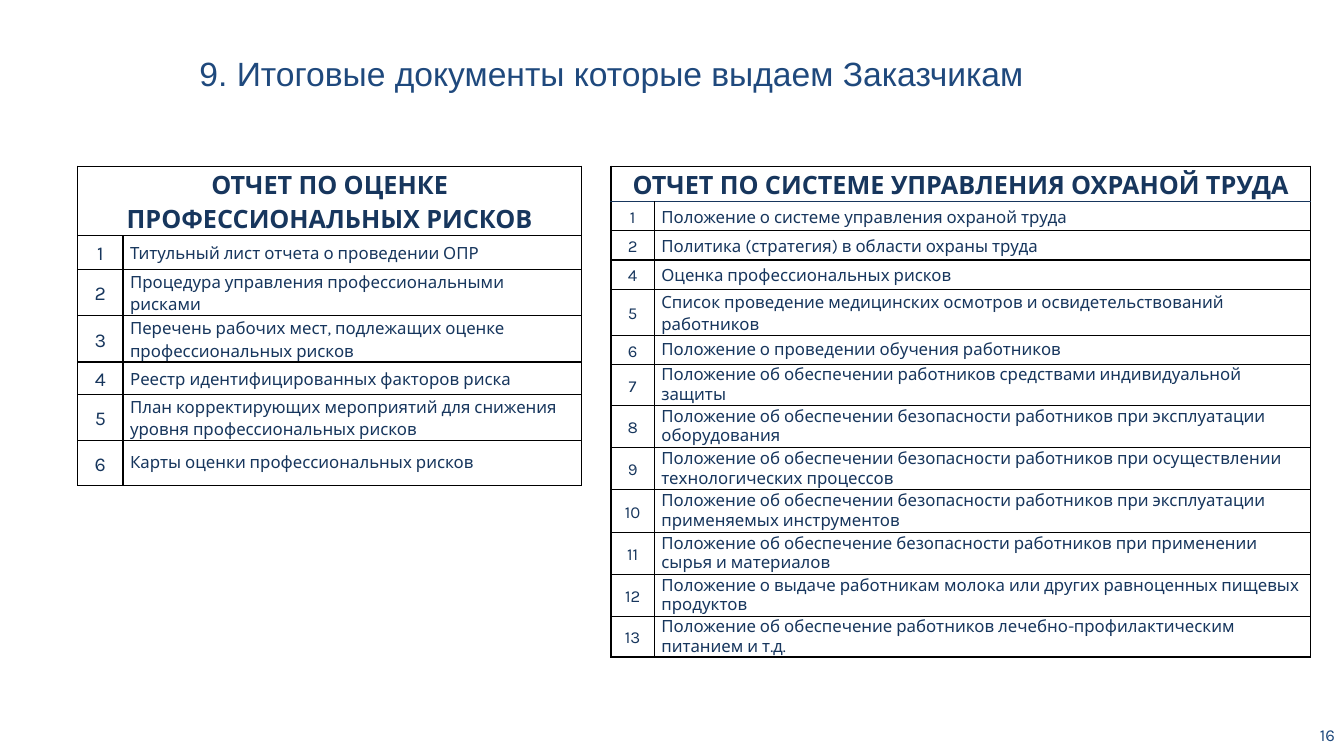
"""Builds the slide listing the final documents handed over to customers."""
from lxml import etree
from pptx import Presentation
from pptx.dml.color import RGBColor
from pptx.enum.text import MSO_ANCHOR, PP_ALIGN
from pptx.oxml.ns import qn
from pptx.util import Inches, Pt

LEFT, CENTER, RIGHT = PP_ALIGN.LEFT, PP_ALIGN.CENTER, PP_ALIGN.RIGHT
TOP, MIDDLE = MSO_ANCHOR.TOP, MSO_ANCHOR.MIDDLE
THEME = {
    "title_font": "Arial", "body_font": "Karla",
    "title_color": "1F497D", "table_color": "17365D", "border_color": "000000",
    "title_size": 24, "heading_size": 18, "body_size": 12,
    "border_width": 1, "loose": 1.15, "tight": 1.0, "title_spacing": 0.89,
}
TABLE_TOP = 1.65

TABLES = [
    {
        "heading": "ОТЧЕТ ПО ОЦЕНКЕ ПРОФЕССИОНАЛЬНЫХ РИСКОВ",
        "left": 0.77, "columns": [0.45, 4.55], "number_size": 14, "loose_rows": 5,
        "heights": [0.63, 0.33, 0.33, 0.42, 0.32, 0.43, 0.45],
        "heading_border": THEME["border_color"],
        "documents": [
            (1, "Титульный лист отчета о проведении ОПР"),
            (2, "Процедура управления профессиональными рисками"),
            (3, "Перечень рабочих мест, подлежащих оценке профессиональных рисков"),
            (4, "Реестр идентифицированных факторов риска"),
            (5, "План корректирующих мероприятий для снижения уровня профессиональных рисков"),
            (6, "Карты оценки профессиональных рисков"),
        ],
    },
    {
        "heading": "ОТЧЕТ ПО СИСТЕМЕ УПРАВЛЕНИЯ ОХРАНОЙ ТРУДА",
        "left": 6.06, "columns": [0.43, 6.51], "number_size": 12, "loose_rows": 4,
        "heights": [0.35] + [0.29] * 6 + [0.42] * 5 + [0.29],
        "heading_border": THEME["table_color"],
        "documents": [
            (1, "Положение о системе управления охраной труда"),
            (2, "Политика (стратегия) в области охраны труда"),
            (4, "Оценка профессиональных рисков"),
            (5, "Список проведение медицинских осмотров и освидетельствований работников"),
            (6, "Положение о проведении обучения работников"),
            (7, "Положение об обеспечении работников средствами индивидуальной защиты"),
            (8, "Положение об обеспечении безопасности работников при эксплуатации оборудования"),
            (9, "Положение об обеспечении безопасности работников при осуществлении технологических процессов"),
            (10, "Положение об обеспечении безопасности работников при эксплуатации применяемых инструментов"),
            (11, "Положение об обеспечение безопасности работников при применении сырья и материалов"),
            (12, "Положение о выдаче работникам молока или других равноценных пищевых продуктов"),
            (13, "Положение об обеспечение работников лечебно-профилактическим питанием и т.д."),
        ],
    },
]


def write(text_frame, text, font, size, color, alignment, spacing, bold=False):
    text_frame.word_wrap = True
    paragraph = text_frame.paragraphs[0]
    paragraph.text = text
    paragraph.alignment = alignment
    paragraph.line_spacing = spacing
    paragraph.font.name = font
    paragraph.font.size = Pt(size)
    paragraph.font.bold = bold
    paragraph.font.color.rgb = RGBColor.from_string(color)


def set_borders(cell, top, bottom):
    side = THEME["border_color"]
    properties = cell._tc.get_or_add_tcPr()
    edges = [("a:lnL", side), ("a:lnR", side), ("a:lnT", top), ("a:lnB", bottom)]
    for position, (tag, color) in enumerate(edges):
        line = etree.Element(qn(tag), w=str(Pt(THEME["border_width"])))
        fill = etree.SubElement(line, qn("a:solidFill"))
        etree.SubElement(fill, qn("a:srgbClr"), val=color)
        properties.insert(position, line)


presentation = Presentation()
presentation.slide_width = Inches(13.33)
presentation.slide_height = Inches(7.5)
slide = presentation.slides.add_slide(presentation.slide_layouts[6])

captions = [
    ("9. Итоговые документы которые выдаем Заказчикам", (1.88, 0.52, 11.45, 0.68), TOP,
     THEME["title_font"], THEME["title_size"], LEFT, THEME["title_spacing"]),
    ("16", (11.59, 7.07, 1.75, 0.44), MIDDLE,
     THEME["body_font"], THEME["body_size"], RIGHT, THEME["tight"]),
]
for text, box, anchor, font, size, alignment, spacing in captions:
    text_frame = slide.shapes.add_textbox(*map(Inches, box)).text_frame
    text_frame.vertical_anchor = anchor
    write(text_frame, text, font, size, THEME["title_color"], alignment, spacing)

for report in TABLES:
    widths, heights = report["columns"], report["heights"]
    table = slide.shapes.add_table(
        len(heights), len(widths), Inches(report["left"]), Inches(TABLE_TOP),
        Inches(sum(widths)), Inches(sum(heights))).table
    table.first_row = table.horz_banding = False
    for column, width in zip(table.columns, widths):
        column.width = Inches(width)
    for row, height in zip(table.rows, heights):
        row.height = Inches(height)
    table.cell(0, 0).merge(table.cell(0, 1))

    rows = [(report["heading"], None)] + report["documents"]
    for row_index, values in enumerate(rows):
        is_heading = row_index == 0
        for column_index, value in enumerate(values):
            cell = table.cell(row_index, column_index)
            cell.vertical_anchor = MIDDLE
            cell.margin_left = cell.margin_right = Inches(0.07)
            cell.margin_top = cell.margin_bottom = 0
            cell.fill.background()
            set_borders(
                cell,
                report["heading_border"] if row_index == 1 else THEME["border_color"],
                report["heading_border"] if is_heading else THEME["border_color"])
            if value is None:
                continue
            is_number = column_index == 0
            size = report["number_size"] if is_number else THEME["body_size"]
            loose = is_number or row_index <= report["loose_rows"]
            write(cell.text_frame, str(value), THEME["body_font"],
                  THEME["heading_size"] if is_heading else size, THEME["table_color"],
                  CENTER if is_number else LEFT,
                  THEME["loose"] if loose else THEME["tight"], is_heading)

presentation.save("out.pptx")
